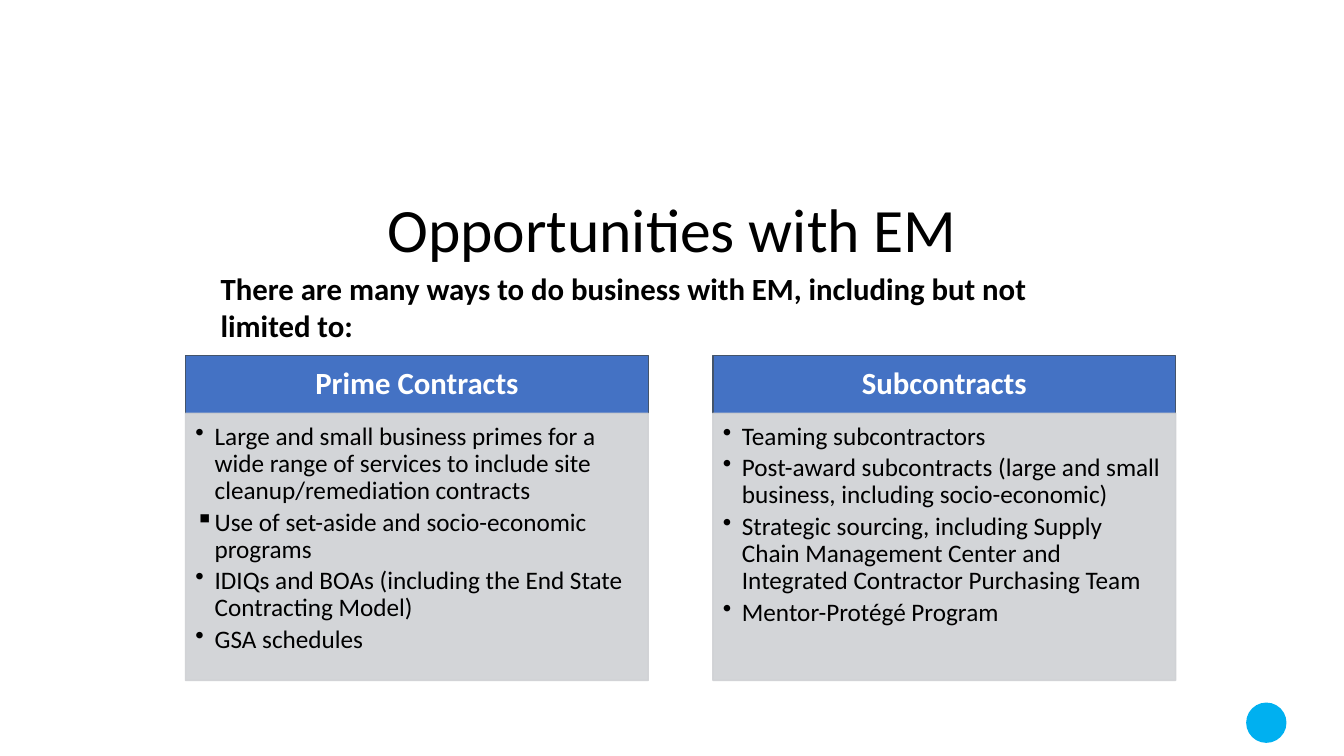
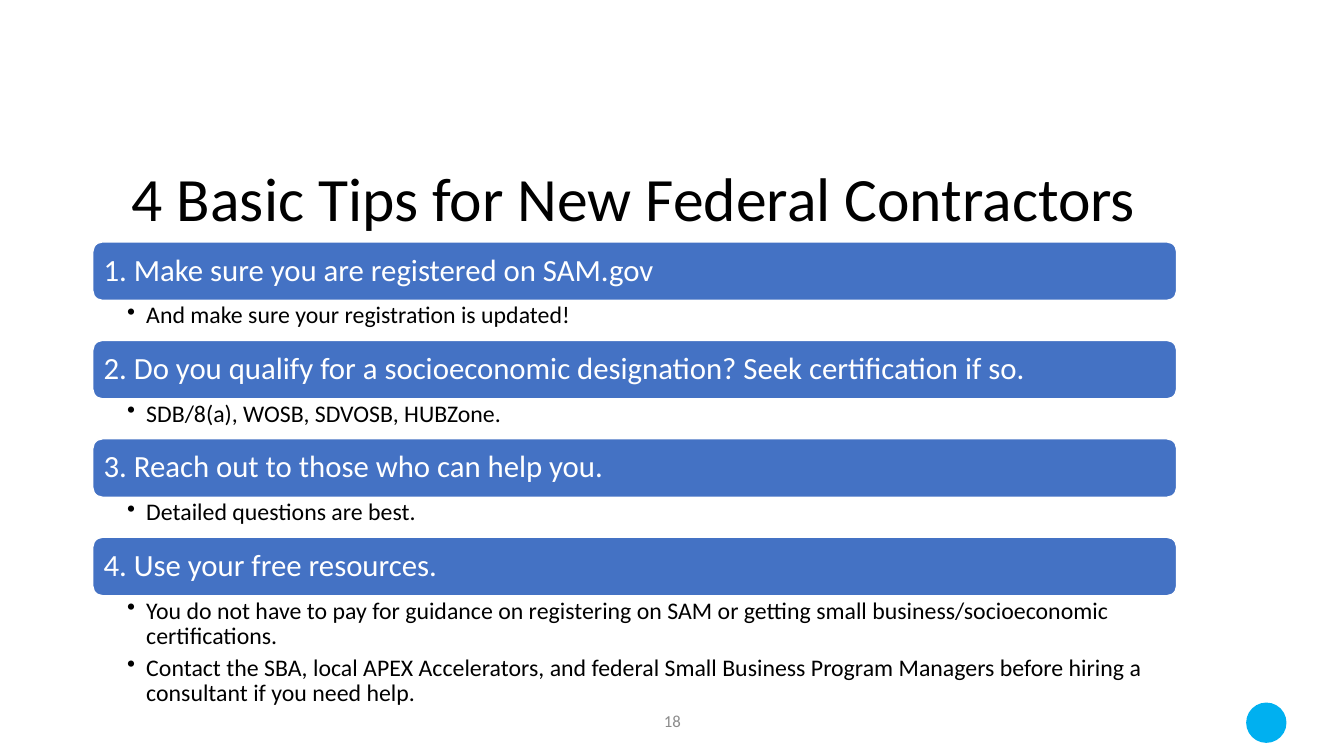
from lxml import etree
from pptx import Presentation
from pptx.dml.color import RGBColor
from pptx.enum.shapes import MSO_SHAPE
from pptx.enum.text import MSO_ANCHOR, PP_ALIGN
from pptx.oxml.ns import qn
from pptx.util import Inches, Pt

COLORS = {
    "text": "000000",
    "white": "FFFFFF",
    "header": "4472C4",
    "header_line": "44546A",
    "panel": "CFD1D4",
    "accent": "00B0F0",
    "page_number": "8C8C8C",
}
FONT = "Calibri"
BULLET_INDENT = Inches(0.19)
DEFAULT_MARGINS = (0.1, 0.05, 0.1, 0.05)

TITLE = {
    "font": {"size": Pt(44)},
    "paragraph": {"alignment": PP_ALIGN.CENTER, "line_spacing": 0.9},
    "anchor": MSO_ANCHOR.MIDDLE,
}
INTRO = {"font": {"size": Pt(22), "bold": True}}
PAGE_NUMBER = {
    "font": {"size": Pt(12)},
    "color": "page_number",
    "paragraph": {"alignment": PP_ALIGN.CENTER},
    "anchor": MSO_ANCHOR.MIDDLE,
}
COLUMN_HEADER = {
    "font": {"size": Pt(22), "bold": True},
    "color": "white",
    "paragraph": {"alignment": PP_ALIGN.CENTER, "line_spacing": 0.9},
    "anchor": MSO_ANCHOR.MIDDLE,
    "margins": (0.17, 0.1, 0.17, 0.1),
}
COLUMN_BODY = {
    "font": {"size": Pt(18)},
    "paragraph": {"alignment": PP_ALIGN.LEFT, "line_spacing": 0.9, "space_after": Pt(3)},
    "margins": (0.1, 0.1, 0.14, 0.16),
    "bullet": "•",
}
TIP_HEADER = {
    "font": {"size": Pt(22)},
    "color": "white",
    "paragraph": {"alignment": PP_ALIGN.LEFT, "line_spacing": 0.9},
    "anchor": MSO_ANCHOR.MIDDLE,
    "margins": (0.08, 0.06, 0.08, 0.06),
}
TIP_DETAIL = {
    "font": {"size": Pt(17)},
    "paragraph": {"line_spacing": 0.9, "space_after": Pt(4)},
    "margins": (0.34, 0.03, 0.17, 0.03),
    "bullet": "•",
}

COLUMNS = [
    ("Prime Contracts", [
        "Large and small business primes for a wide range of services to include site "
        "cleanup/remediation contracts",
        ("Use of set-aside and socio-economic programs", "▪"),
        "IDIQs and BOAs (including the End State Contracting Model)",
        "GSA schedules",
    ]),
    ("Subcontracts", [
        "Teaming subcontractors",
        "Post-award subcontracts (large and small business, including socio-economic)",
        "Strategic sourcing, including Supply Chain Management Center and Integrated "
        "Contractor Purchasing Team",
        "Mentor-Protégé Program",
    ]),
]
TIPS = [
    ("1. Make sure you are registered on SAM.gov",
     ["And make sure your registration is updated!"]),
    ("2. Do you qualify for a socioeconomic designation? Seek certification if so.",
     ["SDB/8(a), WOSB, SDVOSB, HUBZone."]),
    ("3. Reach out to those who can help you.",
     ["Detailed questions are best."]),
    ("4. Use your free resources.", [
        "You do not have to pay for guidance on registering on SAM or getting small "
        "business/socioeconomic certifications.",
        "Contact the SBA, local APEX Accelerators, and federal Small Business Program "
        "Managers before hiring a consultant if you need help.",
    ]),
]


def add_text(slide, position, texts, style, shape=None):
    """Write one paragraph per text into shape, or into a new text box.

    A text may be a (text, bullet) pair to replace the bullet of the style.
    """
    if shape is None:
        shape = slide.shapes.add_textbox(*map(Inches, position))
    frame = shape.text_frame
    frame.word_wrap = True
    frame.vertical_anchor = style.get("anchor", MSO_ANCHOR.TOP)
    sides = ("left", "top", "right", "bottom")
    for side, margin in zip(sides, style.get("margins", DEFAULT_MARGINS)):
        setattr(frame, f"margin_{side}", Inches(margin))
    for index, item in enumerate(texts):
        text, bullet = item if isinstance(item, tuple) else (item, style.get("bullet"))
        paragraph = frame.paragraphs[0] if index == 0 else frame.add_paragraph()
        if bullet:
            properties = paragraph._p.get_or_add_pPr()
            properties.set("marL", str(BULLET_INDENT))
            properties.set("indent", str(-BULLET_INDENT))
            etree.SubElement(properties, qn("a:buChar")).set("char", bullet)
        for name, value in style.get("paragraph", {}).items():
            setattr(paragraph, name, value)
        run = paragraph.add_run()
        run.text = text
        run.font.name = FONT
        run.font.color.rgb = RGBColor.from_string(COLORS[style.get("color", "text")])
        for name, value in style["font"].items():
            setattr(run.font, name, value)


def add_filled_shape(slide, kind, position, fill, line=None, opacity=100):
    shape = slide.shapes.add_shape(kind, *map(Inches, position))
    shape.shadow.inherit = False
    shape.fill.solid()
    shape.fill.fore_color.rgb = RGBColor.from_string(COLORS[fill])
    if line:
        shape.line.color.rgb = RGBColor.from_string(COLORS[line])
        shape.line.width = Pt(1)
    else:
        shape.line.fill.background()
    if opacity < 100:
        for color in shape._element.spPr.iter(qn("a:srgbClr")):
            etree.SubElement(color, qn("a:alpha")).set("val", str(opacity * 1000))
    return shape


presentation = Presentation()
presentation.slide_width = Inches(13.33)
presentation.slide_height = Inches(7.5)

slides = []
for title, left, top in [
    ("Opportunities with EM", 0.92, 1.58),
    ("4 Basic Tips for New Federal Contractors", 0.54, 1.27),
]:
    slide = presentation.slides.add_slide(presentation.slide_layouts[6])
    add_filled_shape(slide, MSO_SHAPE.OVAL, (12.36, 6.97, 0.4, 0.4), "accent")
    add_text(slide, (left, top, 11.5, 1.45), [title], TITLE)
    slides.append(slide)
opportunities, tips = slides

# Opportunities: two columns, each a header above a bulleted panel
column_left, column_top, column_width, column_gap = 1.84, 3.53, 4.59, 0.64
header_height, panel_height = 0.57, 2.65
for index, (heading, points) in enumerate(COLUMNS):
    left = column_left + index * (column_width + column_gap)
    header_position = (left, column_top, column_width, header_height)
    panel_position = (left, column_top + header_height, column_width, panel_height)
    header = add_filled_shape(
        opportunities, MSO_SHAPE.RECTANGLE, header_position, "header", "header_line")
    add_text(opportunities, header_position, [heading], COLUMN_HEADER, header)
    panel = add_filled_shape(
        opportunities, MSO_SHAPE.RECTANGLE, panel_position, "panel", "panel", opacity=90)
    add_text(opportunities, panel_position, points, COLUMN_BODY, panel)
add_text(
    opportunities, (2.09, 2.63, 8.54, 0.84),
    ["There are many ways to do business with EM, including but not limited to:"], INTRO)

# Tips: evenly spaced bars, each followed by its details
tip_left, tip_width, bar_height = 0.92, 10.75, 0.58
first_top, last_top = 2.4, 5.33
tip_step = (last_top - first_top) / (len(TIPS) - 1)
add_text(tips, (4.42, 6.95, 4.5, 0.4), ["18"], PAGE_NUMBER)
for index, (heading, details) in enumerate(TIPS):
    top = first_top + index * tip_step
    bar_position = (tip_left, top, tip_width, bar_height)
    detail_height = 0.4 if len(details) == 1 else 1.17
    detail_position = (tip_left, top + bar_height, tip_width, detail_height)
    bar = add_filled_shape(
        tips, MSO_SHAPE.ROUNDED_RECTANGLE, bar_position, "header", "white")
    add_text(tips, bar_position, [heading], TIP_HEADER, bar)
    add_text(tips, detail_position, details, TIP_DETAIL)

presentation.save("out.pptx")
